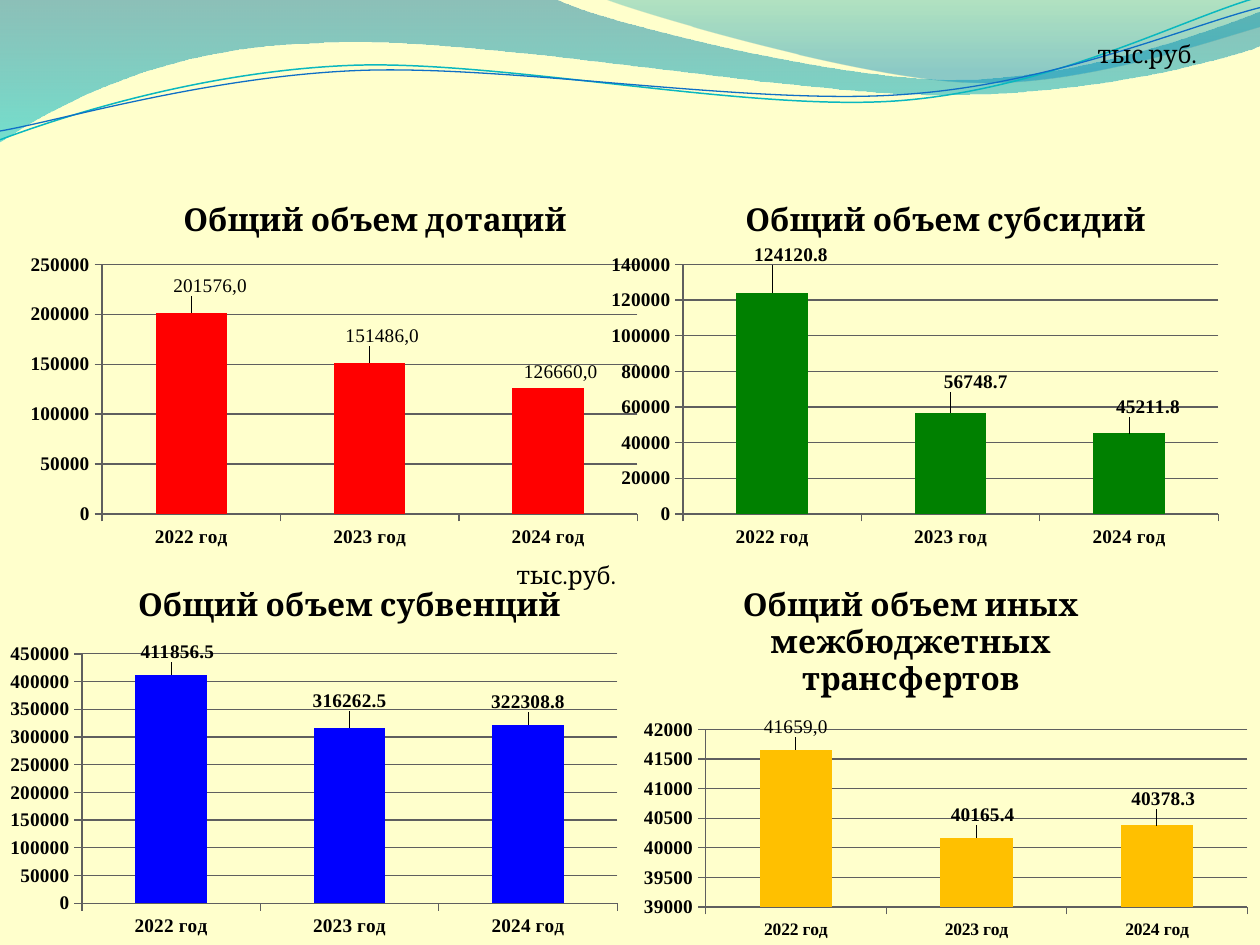
from math import cos, radians, sin

from lxml import etree
from pptx import Presentation
from pptx.chart.data import CategoryChartData
from pptx.dml.color import RGBColor
from pptx.enum.chart import XL_CHART_TYPE, XL_LABEL_POSITION, XL_TICK_MARK
from pptx.enum.text import MSO_ANCHOR, PP_ALIGN
from pptx.oxml.ns import qn
from pptx.util import Inches, Pt

COLUMN = XL_CHART_TYPE.COLUMN_CLUSTERED
OUTSIDE_END = XL_LABEL_POSITION.OUTSIDE_END
TICK_OUT = XL_TICK_MARK.OUTSIDE
MIDDLE = MSO_ANCHOR.MIDDLE
CENTER = PP_ALIGN.CENTER

CREAM = RGBColor(0xFF, 0xFF, 0xCC)
BLACK = RGBColor(0, 0, 0)
GRAY = RGBColor(0x5F, 0x5F, 0x5F)
RED = RGBColor(0xFF, 0, 0)
GREEN = RGBColor(0, 0x80, 0)
BLUE = RGBColor(0, 0, 0xFF)
AMBER = RGBColor(0xFF, 0xC0, 0)
DEEP_TEAL = RGBColor(0, 0x74, 0xA1)
CYAN = RGBColor(0, 0xC6, 0xCF)
TEAL = RGBColor(0, 0xA1, 0xA9)
AZURE = RGBColor(0, 0x8B, 0xBF)
LINE_TEAL = RGBColor(0x0A, 0xB8, 0xBF)
LINE_BLUE = RGBColor(0x0F, 0x6F, 0xC6)

HEAD_FONT = "Cambria"
LABEL_FONT = "Times New Roman"
YEARS = ["2022 год", "2023 год", "2024 год"]
CURVE_TILT = 357.3
NO_LEADERS = (
    '<c:extLst xmlns:c="http://schemas.openxmlformats.org/drawingml/2006/chart">'
    '<c:ext uri="{CE6537A1-D6FC-4f65-9D91-7224C49458BB}" '
    'xmlns:c15="http://schemas.microsoft.com/office/drawing/2012/chart">'
    '<c15:showLeaderLines val="0"/></c:ext></c:extLst>'
)

WIDE_WAVE = [
    (0, 0), (4.4, -0.01),
    (4.76, 0.17, 6.64, 0.63, 7.58, 0.63), (8.53, 0.63, 9.58, 0.26, 10, 0.09),
    (10.01, 0.36),
    (9.83, 0.44, 8.7, 0.76, 7.46, 0.75), (6.22, 0.75, 3.82, 0.28, 2.57, 0.34),
    (1.29, 0.36, 0.46, 0.83, -0.01, 1.13), (0, 0),
]
RIGHT_WAVE = [
    (4.79, -0.01),
    (5.09, 0.11, 6.82, 0.62, 7.69, 0.65), (8.56, 0.69, 9.61, 0.32, 10, 0.21),
    (10, 0), (4.79, -0.01),
]
TEAL_CURVE = [
    (0, 1.11),
    (0.48, 0.93, 1.58, 0.57, 2.77, 0.52), (3.95, 0.47, 5.93, 0.89, 7.13, 0.8),
    (8.33, 0.71, 9.38, 0.15, 9.98, -0.02),
]
BLUE_CURVE = [
    (0, 1.04),
    (0.47, 0.96, 1.64, 0.61, 2.83, 0.56), (4.03, 0.51, 5.97, 0.84, 7.17, 0.75),
    (8.36, 0.67, 9.41, 0.21, 10, 0.06),
]

PLOT = (0.13, 0.23, 0.85, 0.66)
CHARTS = [
    dict(at=(0.16, 1.41), title="Общий объем дотаций", title_at=(0.25, 0.04),
         values=[201576, 151486, 126660], color=RED, scale=(0, 250000, 50000),
         custom={0: "201576,0", 1: "151486,0", 2: "126660,0"},
         shifts=[(0.03, -0.03), (0.02, -0.03), (0.02, 0)]),
    dict(at=(4.77, 1.41), title="Общий объем субсидий", title_at=(0.22, 0.04),
         values=[124120.8, 56748.7, 45211.8], color=GREEN, scale=(0, 140000, 20000),
         shifts=[(0.03, -0.06), (0.04, -0.04), (0.03, -0.03)]),
    dict(at=(0, 4.5), title="Общий объем субвенций", title_at=(0.21, 0.03),
         values=[411856.5, 316262.5, 322308.8], color=BLUE, scale=(0, 450000, 50000),
         shifts=[(0.01, -0.02), (0, -0.03), (0, -0.02)]),
    dict(at=(5, 4.5), title="Общий объем иных межбюджетных трансфертов",
         title_at=(0.17, 0.03), values=[41659, 40165.4, 40378.3], color=AMBER,
         scale=(39000, 42000, 500), custom={0: "41659,0"},
         shifts=[(0, -0.02), (0.01, -0.02), (0.01, -0.03)],
         plot=(0.12, 0.43, 0.86, 0.47), year_size=10),
]


def set_font(font, size, name, bold=False):
    font.size, font.name, font.bold = Pt(size), name, bold
    font.color.rgb = BLACK


def add_outline(slide, at, route, closed, rotation=0):
    left, top, width, height = at
    tilt = radians(-rotation)
    builder = slide.shapes.build_freeform(0, 0)
    builder.add_line_segments([(Inches(width), Inches(height))], close=closed)
    sp = builder.convert_to_shape()
    sp.left, sp.top, sp.width, sp.height = (Inches(v) for v in at)
    sp.rotation = rotation
    sp.shadow.inherit = False
    figure = next(sp._element.iter(qn("a:path")))
    for node in list(figure):
        figure.remove(node)
    figure.set("w", str(Inches(width)))
    figure.set("h", str(Inches(height)))
    for i, part in enumerate(route):
        tag = "a:moveTo" if i == 0 else "a:lnTo" if len(part) == 2 else "a:cubicBezTo"
        command = etree.SubElement(figure, qn(tag))
        for x, y in zip(part[::2], part[1::2]):
            dx, dy = x - left - width / 2, y - top - height / 2
            local_x = dx * cos(tilt) - dy * sin(tilt) + width / 2
            local_y = dx * sin(tilt) + dy * cos(tilt) + height / 2
            etree.SubElement(command, qn("a:pt"), x=str(Inches(local_x)), y=str(Inches(local_y)))
    if closed:
        etree.SubElement(figure, qn("a:close"))
    return sp


def add_wave(slide, at, route, stops):
    sp = add_outline(slide, at, route, True)
    sp.line.fill.background()
    sp.fill.gradient()
    sp.fill.gradient_angle = 270
    for stop, (position, color, _) in zip(sp.fill.gradient_stops, stops):
        stop.position = position
        stop.color.rgb = color
    for node, (_, _, opacity) in zip(sp._element.iter(qn("a:srgbClr")), stops):
        etree.SubElement(node, qn("a:alpha"), val=str(opacity * 1000))


def add_curve(slide, at, route, color, width):
    sp = add_outline(slide, at, route, False, CURVE_TILT)
    sp.fill.background()
    sp.line.color.rgb = color
    sp.line.width = Pt(width)


def add_unit(slide, left, top):
    tf = slide.shapes.add_textbox(Inches(left), Inches(top), Inches(1.33), Inches(0.23)).text_frame
    tf.word_wrap = True
    tf.vertical_anchor = MIDDLE
    tf.text = "тыс.руб."
    p = tf.paragraphs[0]
    p.alignment = CENTER
    set_font(p.runs[0].font, 14, HEAD_FONT)


def set_layout(parent, index, **values):
    old = parent.find(qn("c:layout"))
    if old is not None:
        parent.remove(old)
    layout = etree.Element(qn("c:layout"))
    manual = etree.SubElement(layout, qn("c:manualLayout"))
    for tag, value in values.items():
        etree.SubElement(manual, qn("c:" + tag), val=str(value))
    parent.insert(index, layout)


def style_axis(axis, size):
    axis.major_tick_mark = TICK_OUT
    set_font(axis.tick_labels.font, size, LABEL_FONT, True)
    axis.format.line.color.rgb = GRAY
    axis.format.line.width = Pt(0.75)


def label_points(series, custom, shifts):
    for i in range(len(shifts)):
        label = series.points[i].data_label
        if i in custom:
            label.text_frame.text = custom[i]
            set_font(label.text_frame.paragraphs[0].runs[0].font, 11, LABEL_FONT)
        else:
            set_font(label.font, 11, LABEL_FONT, True)
        label.position = OUTSIDE_END
    for node, (dx, dy) in zip(series._element.iter(qn("c:dLbl")), shifts):
        set_layout(node, 1, x=dx, y=dy)
    series._element.find(qn("c:dLbls")).append(etree.fromstring(NO_LEADERS))


def add_column_chart(slide, at, title, title_at, values, color, scale, shifts,
                     custom=(), plot=PLOT, year_size=11):
    data = CategoryChartData()
    data.categories = YEARS
    data.add_series("Series 1", values)
    chart = slide.shapes.add_chart(COLUMN, Inches(at[0]), Inches(at[1]),
                                   Inches(5), Inches(3), data).chart
    set_font(chart.font, 10, HEAD_FONT)
    chart.has_legend = False
    chart.has_title = True
    tf = chart.chart_title.text_frame
    tf.text = title
    set_font(tf.paragraphs[0].runs[0].font, 18, HEAD_FONT, True)
    set_layout(chart.chart_title._element, 1, xMode="edge", yMode="edge",
               x=title_at[0], y=title_at[1])
    x, y, w, h = plot
    set_layout(chart._chartSpace.chart.plotArea, 0, layoutTarget="inner",
               xMode="edge", yMode="edge", x=x, y=y, w=w, h=h)
    style_axis(chart.category_axis, year_size)
    axis = chart.value_axis
    style_axis(axis, 11)
    axis.minimum_scale, axis.maximum_scale, axis.major_unit = scale
    axis.major_gridlines.format.line.color.rgb = GRAY
    axis.major_gridlines.format.line.width = Pt(0.75)
    columns = chart.plots[0]
    columns.vary_by_categories = False
    columns.gap_width = 150
    series = columns.series[0]
    series.format.fill.solid()
    series.format.fill.fore_color.rgb = color
    set_font(series.data_labels.font, 11, LABEL_FONT, True)
    series.data_labels.show_value = True
    label_points(series, custom, shifts)


def main():
    prs = Presentation()
    prs.slide_width, prs.slide_height = Inches(10), Inches(7.5)
    s = prs.slides.add_slide(prs.slide_layouts[6])
    s.background.fill.solid()
    s.background.fill.fore_color.rgb = CREAM
    add_wave(s, (-0.01, -0.01, 10.02, 1.14), WIDE_WAVE, [(0, DEEP_TEAL, 45), (1, CYAN, 55)])
    add_wave(s, (4.79, -0.01, 5.21, 0.7), RIGHT_WAVE, [(0, TEAL, 30), (0.8, AZURE, 45)])
    add_curve(s, (-0.02, 0.22, 10.02, 0.71), TEAL_CURVE, LINE_TEAL, 0.85)
    add_curve(s, (-0.02, 0.3, 10.03, 0.58), BLUE_CURVE, LINE_BLUE, 0.75)
    add_unit(s, 3.83, 4.45)
    add_unit(s, 8.44, 0.31)
    for chart_data in CHARTS:
        add_column_chart(s, **chart_data)
    prs.save("out.pptx")


if __name__ == "__main__":
    main()
